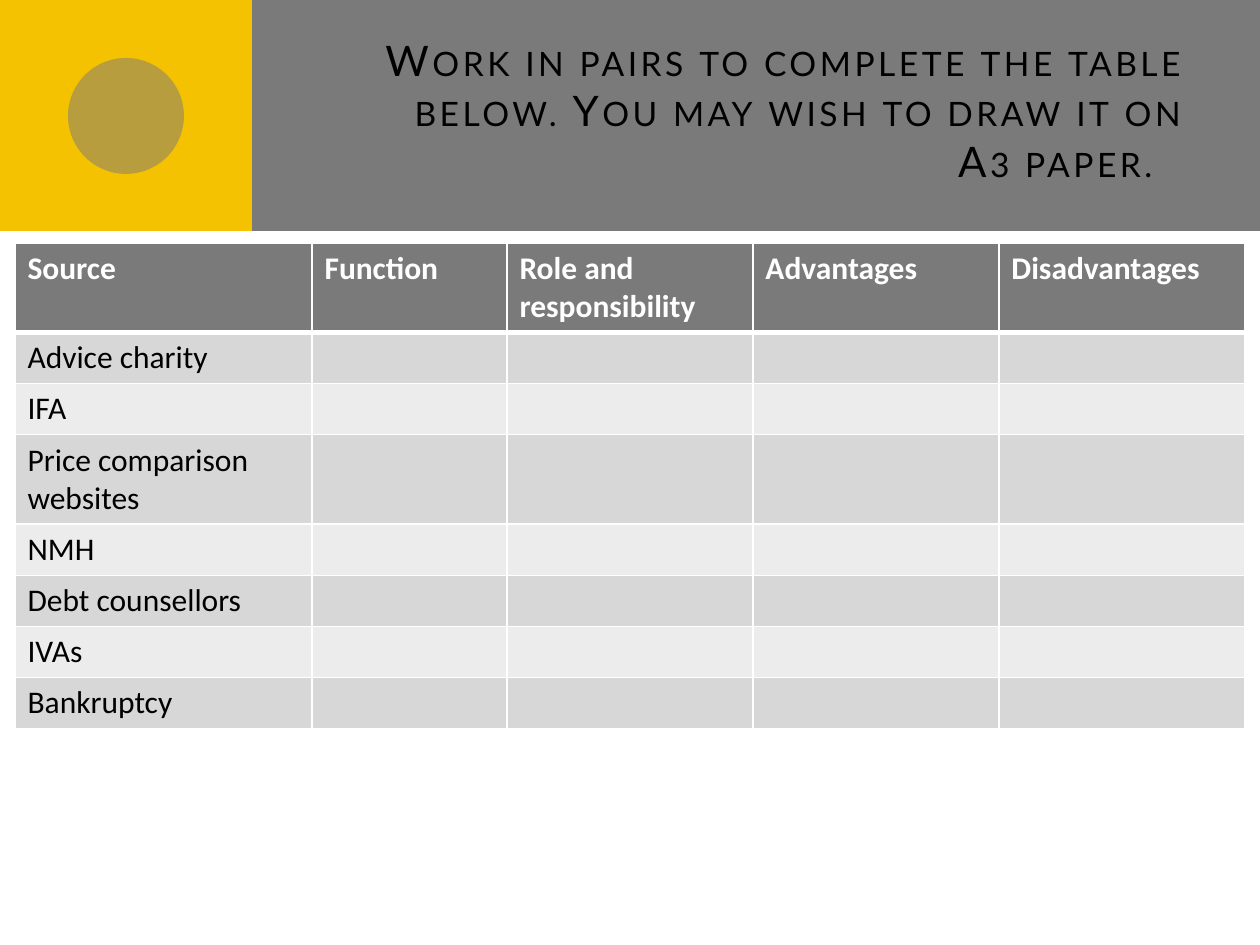
from dataclasses import dataclass

from lxml import etree
from pptx import Presentation
from pptx import util as u
from pptx.dml.color import RGBColor
from pptx.enum import shapes, text
from pptx.oxml.ns import qn

PX = u.Inches(1) // 126


@dataclass(frozen=True)
class Theme:
    grey: str = "7A7A7A"
    yellow: str = "F5C201"
    white: str = "FFFFFF"
    black: str = "000000"
    bands: tuple = ("D7D7D7", "ECECEC")
    title_font: str = "Lato"
    body_font: str = "Calibri"
    title_size: int = 24
    body_size: int = 18


THEME = Theme()
TITLE = ("Work in pairs to complete the table below. "
         "You may wish to draw it on A3 paper.")
HEADERS = ["Source", "Function", "Role and responsibility", "Advantages", "Disadvantages"]
SOURCES = ["Advice charity", "IFA", "Price comparison websites", "NMH",
           "Debt counsellors", "IVAs", "Bankruptcy"]
COLUMN_WIDTHS = [297, 195, 246, 246, 246]
ROW_HEIGHT = 51


def px(*lengths):
    return [n * PX for n in lengths]


def style_font(font, name, size, color, bold=False):
    font.name = name
    font.size = u.Pt(size)
    font.bold = bold
    font.color.rgb = RGBColor.from_string(color)


def add_block(s, kind, box, color, opacity=100):
    sp = s.shapes.add_shape(kind, *px(*box))
    sp.shadow.inherit = False
    sp.line.fill.background()
    sp.fill.solid()
    sp.fill.fore_color.rgb = RGBColor.from_string(color)
    if opacity < 100:
        clr = sp._element.spPr.find(qn("a:solidFill")).find(qn("a:srgbClr"))
        etree.SubElement(clr, qn("a:alpha"), val=str(opacity * 1000))


def add_banner(s):
    shape = shapes.MSO_SHAPE
    add_block(s, shape.RECTANGLE, (0, 0, 1260, 231), THEME.grey)
    add_block(s, shape.RECTANGLE, (0, 0, 252, 231), THEME.yellow)
    add_block(s, shape.OVAL, (68, 58, 116, 116), THEME.grey, opacity=50)


def set_title(s, wording):
    sp = s.shapes.title
    sp.left, sp.top, sp.width, sp.height = px(336, 31, 861, 158)
    s.shapes._spTree.append(sp._element)
    tf = sp.text_frame
    tf.text = wording
    tf.word_wrap = True
    tf.auto_size = text.MSO_AUTO_SIZE.NONE
    tf.vertical_anchor = text.MSO_ANCHOR.MIDDLE
    p = tf.paragraphs[0]
    p.alignment = text.PP_ALIGN.RIGHT
    r = p.runs[0]
    style_font(r.font, THEME.title_font, THEME.title_size, THEME.black)
    rPr = r._r.get_or_add_rPr()
    rPr.set("cap", "small")
    rPr.set("spc", "200")


def set_borders(cell, top, bottom):
    tcPr = cell._tc.get_or_add_tcPr()
    widths = {"a:lnL": 1, "a:lnR": 1, "a:lnT": top, "a:lnB": bottom}
    for i, (tag, width) in enumerate(widths.items()):
        ln = etree.Element(qn(tag), w=str(u.Pt(width)))
        fill = etree.SubElement(ln, qn("a:solidFill"))
        etree.SubElement(fill, qn("a:srgbClr"), val=THEME.white)
        tcPr.insert(i, ln)


def fill_cell(cell, wording, fill, color, bold=False, top=1, bottom=1):
    cell.text = wording
    style_font(cell.text_frame.paragraphs[0].font, THEME.body_font,
               THEME.body_size, color, bold)
    cell.fill.solid()
    cell.fill.fore_color.rgb = RGBColor.from_string(fill)
    set_borders(cell, top, bottom)


def add_source_table(s):
    rows = len(SOURCES) + 1
    box = px(15, 243, sum(COLUMN_WIDTHS), ROW_HEIGHT * rows)
    table = s.shapes.add_table(rows, len(HEADERS), *box).table
    for column, width in zip(table.columns, COLUMN_WIDTHS):
        column.width = width * PX
    for c, header in enumerate(HEADERS):
        fill_cell(table.cell(0, c), header, THEME.grey, THEME.white, bold=True, bottom=3)
        for i, source in enumerate(SOURCES):
            fill_cell(table.cell(i + 1, c), source if c == 0 else "",
                      THEME.bands[i % 2], THEME.black, top=3 if i == 0 else 1)


def main():
    prs = Presentation()
    prs.slide_width, prs.slide_height = px(1260, 945)
    s = prs.slides.add_slide(prs.slide_layouts[5])
    add_banner(s)
    set_title(s, TITLE)
    add_source_table(s)
    prs.save("out.pptx")


if __name__ == "__main__":
    main()
